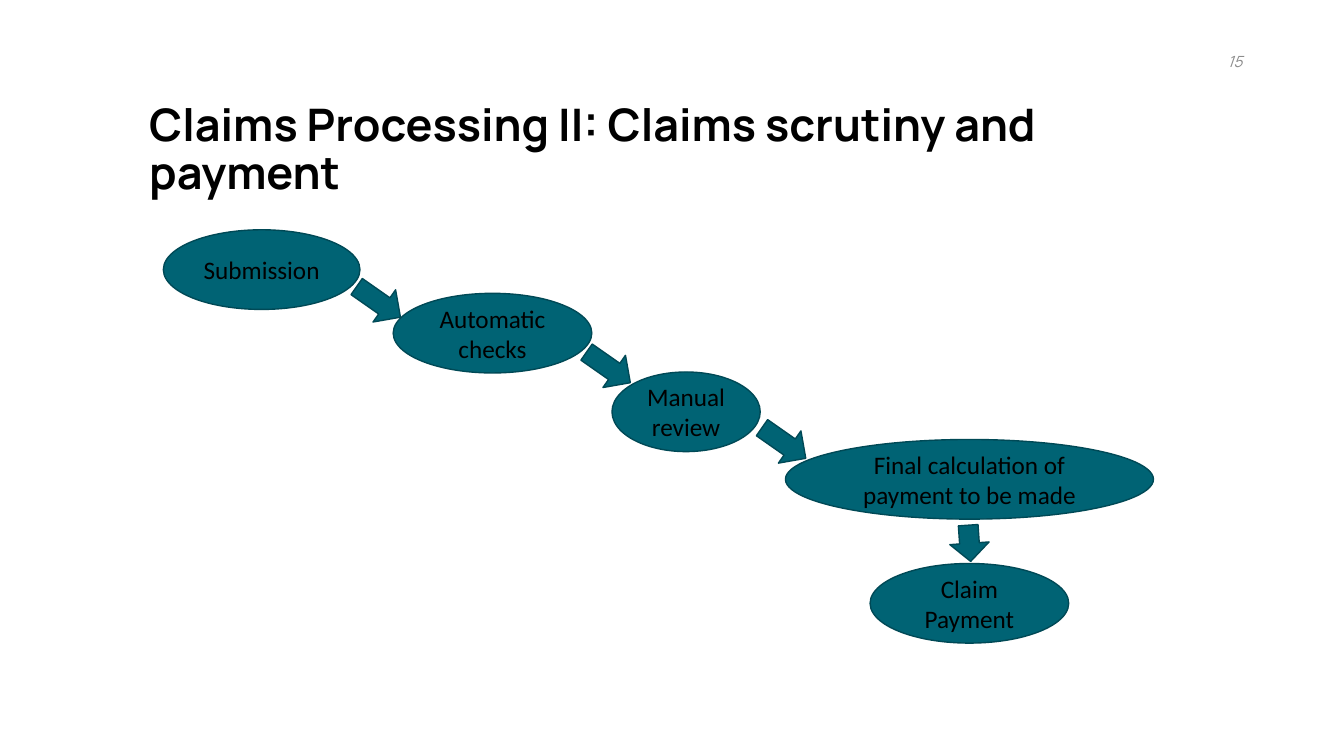
"""Build the claims scrutiny and payment slide."""
from dataclasses import dataclass

from pptx import Presentation
from pptx.dml.color import RGBColor
from pptx.enum import shapes, text
from pptx.util import Inches, Pt

TITLE = "Claims Processing II: Claims scrutiny and payment"
PAGE_NUMBER = "15"
STEP_HEIGHT = 0.79
STEPS = [
    ("Submission", 1.62, 2.28, 1.95),
    ("Automatic checks", 3.9, 2.91, 1.97),
    ("Manual review", 6.07, 3.69, 1.47),
    ("Final calculation of payment to be made", 7.79, 4.36, 3.65),
    ("Claim Payment", 8.63, 5.59, 1.97),
]
ARROW_WIDTH = 0.39
ARROWS = [
    (3.56, 2.73, 0.53, 305),
    (5.84, 3.38, 0.53, 305),
    (7.58, 4.13, 0.53, 305),
    (9.42, 5.21, 0.36, 356.1),
]


@dataclass(frozen=True)
class Theme:
    """Colours, fonts and type sizes."""
    fill: RGBColor = RGBColor(0x00, 0x63, 0x74)
    outline: RGBColor = RGBColor(0x00, 0x49, 0x56)
    ink: RGBColor = RGBColor(0, 0, 0)
    muted: RGBColor = RGBColor(0x8C, 0x8C, 0x8C)
    heading_font: str = "Manrope"
    body_font: str = "Calibri"
    title_size: int = 32
    step_size: int = 18
    number_size: int = 11


THEME = Theme()


def write(box, words, font, size, color, align, anchor, bold=False, italic=False):
    """Put one formatted paragraph in a box."""
    frame = box.text_frame
    frame.text = words
    frame.word_wrap = True
    frame.auto_size = text.MSO_AUTO_SIZE.NONE
    frame.vertical_anchor = anchor
    para = frame.paragraphs[0]
    para.alignment = align
    span = para.runs[0].font
    span.name, span.size, span.color.rgb = font, Pt(size), color
    span.bold, span.italic = bold, italic
    return para


def add_filled(page, kind, left, top, width, height):
    """Add a teal preset shape."""
    shape = page.shapes.add_shape(
        kind, Inches(left), Inches(top), Inches(width), Inches(height))
    shape.shadow.inherit = False
    shape.fill.solid()
    shape.fill.fore_color.rgb = THEME.fill
    shape.line.color.rgb = THEME.outline
    shape.line.width = Pt(1)
    return shape


def main():
    """Lay out the slide and save the deck."""
    deck = Presentation()
    deck.slide_width, deck.slide_height = Inches(13.33), Inches(7.5)
    page = deck.slides.add_slide(deck.slide_layouts[5])

    title = page.shapes.title
    title.left, title.top = Inches(1.38), Inches(0.97)
    title.width, title.height = Inches(10.76), Inches(1.05)
    heading = write(title, TITLE, THEME.heading_font, THEME.title_size, THEME.ink,
                    text.PP_ALIGN.LEFT, text.MSO_ANCHOR.TOP, bold=True)
    heading.line_spacing = 0.9

    for label, left, top, width in STEPS:
        step = add_filled(page, shapes.MSO_SHAPE.OVAL, left, top, width, STEP_HEIGHT)
        write(step, label, THEME.body_font, THEME.step_size, THEME.ink,
              text.PP_ALIGN.CENTER, text.MSO_ANCHOR.MIDDLE)

    for left, top, height, angle in ARROWS:
        arrow = add_filled(page, shapes.MSO_SHAPE.DOWN_ARROW,
                           left, top, ARROW_WIDTH, height)
        arrow.rotation = angle

    number = page.shapes.add_textbox(Inches(9.42), Inches(0.41), Inches(3), Inches(0.4))
    write(number, PAGE_NUMBER, THEME.heading_font, THEME.number_size, THEME.muted,
          text.PP_ALIGN.RIGHT, text.MSO_ANCHOR.MIDDLE, italic=True)

    deck.save("out.pptx")


if __name__ == "__main__":
    main()
